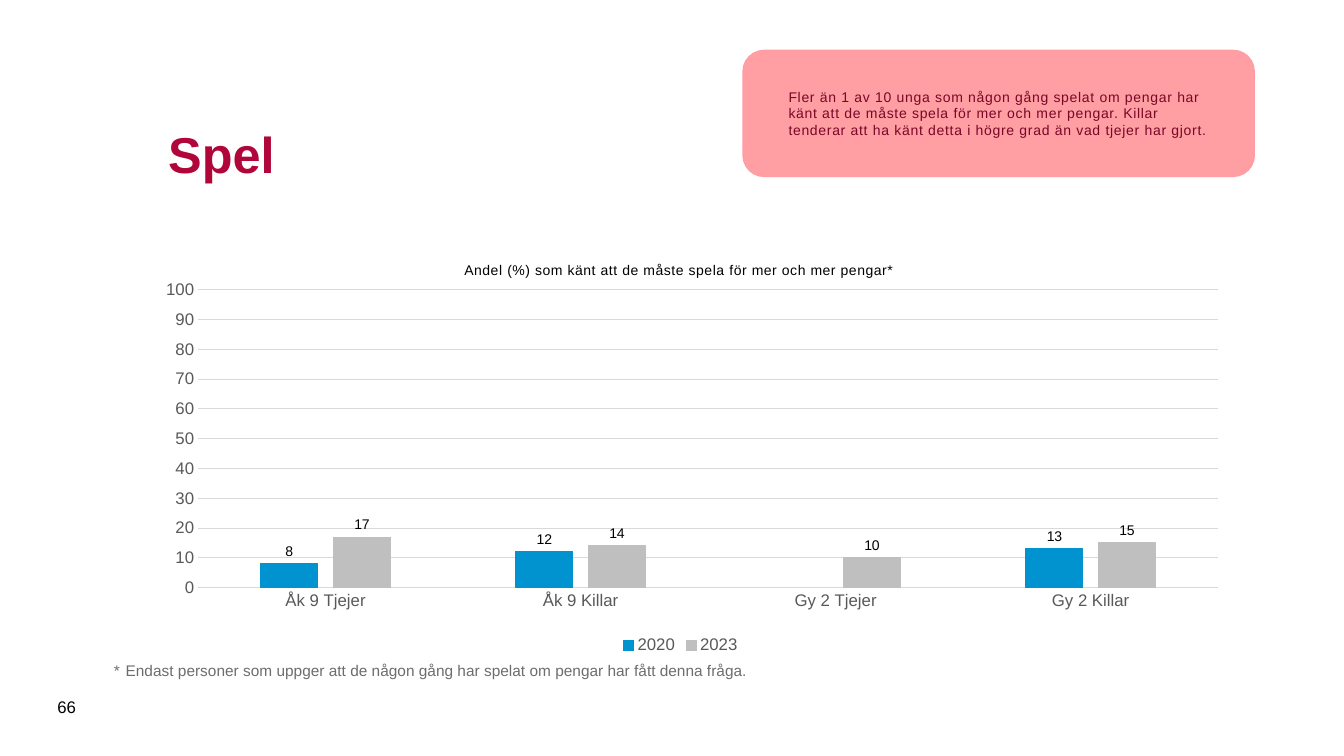
from lxml.etree import SubElement
from pptx import Presentation
from pptx.chart.data import CategoryChartData as Data
from pptx.dml.color import RGBColor
from pptx.enum.chart import XL_CHART_TYPE as Kind, XL_LABEL_POSITION as Spot
from pptx.enum.chart import XL_LEGEND_POSITION as Side, XL_TICK_MARK as Tick
from pptx.enum.shapes import MSO_SHAPE as Shape
from pptx.enum.text import MSO_ANCHOR as Anchor, PP_ALIGN as Align
from pptx.oxml.ns import qn
from pptx.util import Inches, Pt

BLACK = RGBColor(0x00, 0x00, 0x00)
WINE = RGBColor(0xB1, 0x06, 0x3A)
DARK = RGBColor(0x79, 0x07, 0x26)
PINK = RGBColor(0xFF, 0x9D, 0xA2)
BLUE = RGBColor(0x00, 0x93, 0xD0)
SILVER = RGBColor(0xBF, 0xBF, 0xBF)
RULE = RGBColor(0xD9, 0xD9, 0xD9)
AXIS = RGBColor(0x59, 0x59, 0x59)
NOTE = RGBColor(0x6D, 0x6D, 0x6D)
FORMAT = "#,##0;#,##0"


def style(font, size, color, bold=False):
    look = {"name": "Arial", "size": Pt(size), "bold": bold}
    for key, value in look.items():
        setattr(font, key, value)
    font.color.rgb = color


def place(part, index, **spots):
    """Give a chart part a manual layout as fractions of the chart."""
    for old in part.findall(qn("c:layout")):
        part.remove(old)
    layout = SubElement(part, qn("c:layout"))
    part.insert(index, layout)
    manual = SubElement(layout, qn("c:manualLayout"))
    for tag, value in spots.items():
        SubElement(manual, qn("c:" + tag)).set("val", str(value))


deck = Presentation()
deck.slide_width, deck.slide_height = Inches(13.33), Inches(7.5)
slide = deck.slides.add_slide(deck.slide_layouts[6])
shapes = slide.shapes

# Pink callout
card = shapes.add_shape(Shape.ROUNDED_RECTANGLE, Inches(7.37), Inches(0.5),
                        Inches(5.07), Inches(1.25))
card.shadow.inherit = False
card.fill.solid()
card.fill.fore_color.rgb = PINK
tint = card.fill._xPr.find(".//" + qn("a:srgbClr"))
SubElement(tint, qn("a:alpha")).set("val", "98000")
card.line.color.rgb = PINK
card.line.width = Pt(1)

# Heading, page number and footnote boxes
head, page, foot = [
    shapes.add_textbox(*map(Inches, box))
    for box in ((1.57, 0.81, 10.89, 1.42), (0.47, 6.81, 0.57, 0.4),
                (1.13, 6.56, 10.24, 0.79))
]

# Text: shape, anchor, insets, size, colour, bold, runs with letter spacing
texts = [
    (head, Anchor.MIDDLE, (0.1, 0.05), 36, WINE, True, [("Spel", 0)]),
    (page, Anchor.MIDDLE, (0.1, 0.05), 12, BLACK, False, [("66", 0)]),
    (card, Anchor.MIDDLE, (0.39, 0.2), 10, DARK, False, [
        ("Fler än 1 av 10 unga som någon gång spelat om pengar har känt att "
         "de måste spela för mer och mer pengar. Killar tenderar att ha känt "
         "detta i högre grad än vad tjejer har gjort.", 50)]),
    (foot, Anchor.TOP, (0, 0), 11, NOTE, False, [
        ("* ", 50),
        ("Endast personer som uppger att de någon gång har spelat om pengar "
         "har fått denna fråga.", 0)]),
]
for shape, anchor, (wide, high), size, color, bold, runs in texts:
    frame = shape.text_frame
    look = {"word_wrap": True, "vertical_anchor": anchor,
            "margin_left": Inches(wide), "margin_right": Inches(wide),
            "margin_top": Inches(high), "margin_bottom": Inches(high)}
    for key, value in look.items():
        setattr(frame, key, value)
    para = frame.paragraphs[0]
    para.alignment = Align.LEFT
    for words, space in runs:
        run = para.add_run()
        run.text = words
        style(run.font, size, color, bold)
        run.font._rPr.set("spc", str(space))

# Column chart
data = Data(number_format=FORMAT)
data.categories = ["Åk 9 Tjejer", "Åk 9 Killar", "Gy 2 Tjejer", "Gy 2 Killar"]
data.add_series("2020", (8, 12, None, 13))
data.add_series("2023", (17, 14, 10, 15))
chart = shapes.add_chart(Kind.COLUMN_CLUSTERED, Inches(1.04), Inches(2.4),
                         Inches(11.42), Inches(4.13), data).chart
style(chart.font, 10, BLACK)
plot = chart.plots[0]
plot.gap_width, plot.overlap, plot.vary_by_categories = 219, -27, False
place(chart._chartSpace.chart.plotArea, 0, layoutTarget="inner", xMode="edge",
      yMode="edge", x=0.081, y=0.115, w=0.886, h=0.716)

# Chart title
title = chart.chart_title
run = title.text_frame.paragraphs[0].add_run()
run.text = "Andel (%) som känt att de måste spela för mer och mer pengar*"
style(run.font, 10, BLACK)
run.font._rPr.set("spc", "50")
place(title._element, 1, xMode="edge", yMode="edge", x=0.31, y=0.04)

# Columns and their values
for series, color in zip(plot.series, (BLUE, SILVER)):
    series.format.fill.solid()
    series.format.fill.fore_color.rgb = color
    series.format.line.color.rgb = color
    series.format.line.width = Pt(0.75)
    labels = series.data_labels
    look = {"show_value": True, "position": Spot.OUTSIDE_END,
            "number_format": FORMAT, "number_format_is_linked": False}
    for key, value in look.items():
        setattr(labels, key, value)
    style(labels.font, 10, BLACK)

# Axes
cats, vals = chart.category_axis, chart.value_axis
for axis in (cats, vals):
    axis.major_tick_mark = axis.minor_tick_mark = Tick.NONE
    style(axis.tick_labels.font, 12, AXIS)
look = {"minimum_scale": 0, "maximum_scale": 100, "major_unit": 10,
        "has_major_gridlines": True}
for key, value in look.items():
    setattr(vals, key, value)
vals.tick_labels.number_format = FORMAT
vals.tick_labels.number_format_is_linked = False
vals.format.line.fill.background()
for line in (cats.format.line, vals.major_gridlines.format.line):
    line.color.rgb = RULE
    line.width = Pt(0.75)

# Legend
chart.has_legend = True
chart.legend.position = Side.BOTTOM
chart.legend.include_in_layout = False
style(chart.legend.font, 12, AXIS)

deck.save("out.pptx")
